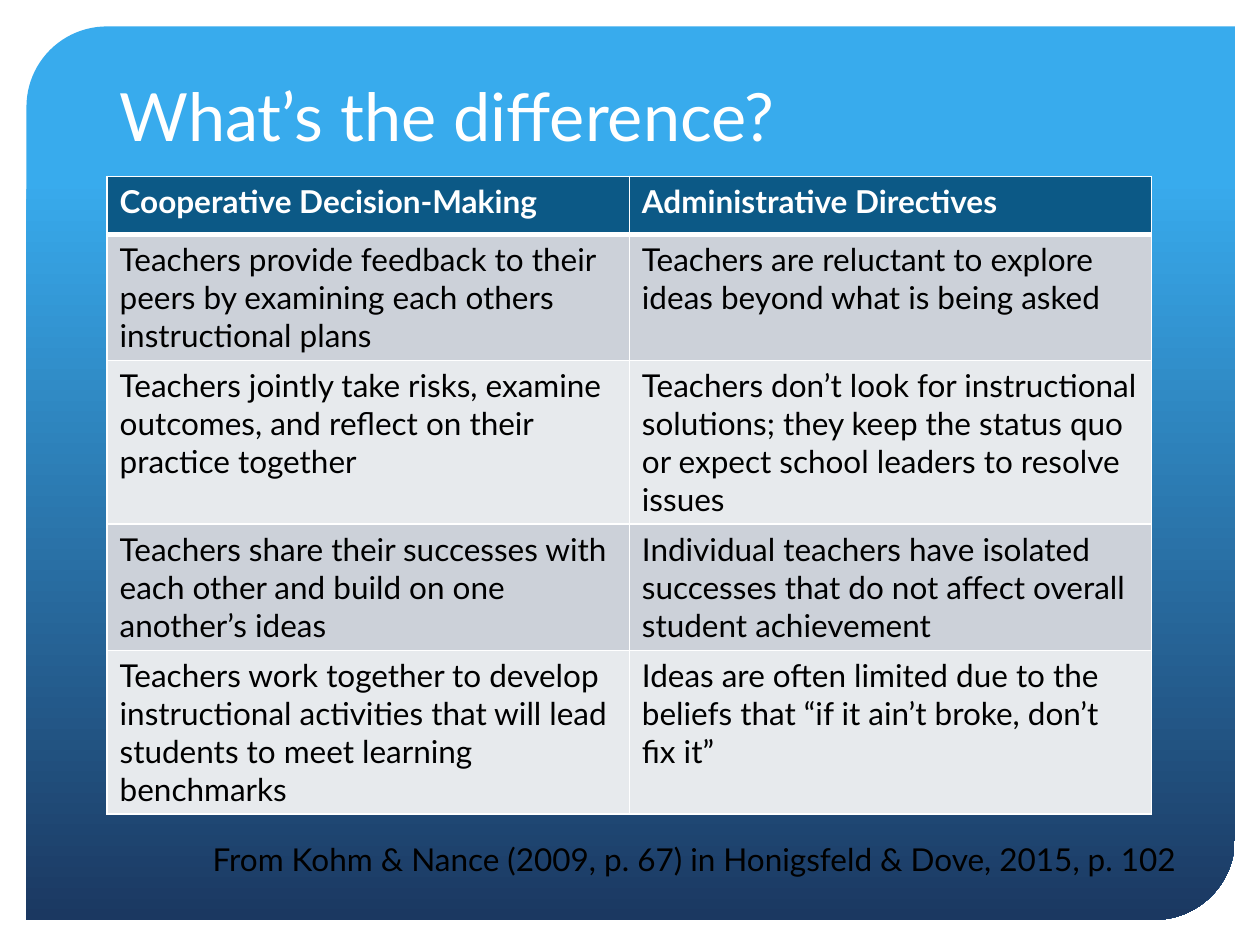
"""Build a slide that contrasts cooperative decisions with directives in a table."""
from dataclasses import dataclass
from typing import NamedTuple

from lxml import etree
from pptx import Presentation
from pptx import util as u
from pptx.dml import color
from pptx.enum import shapes, text
from pptx.oxml import ns

COLUMNS, ROWS = 100, 75
SLIDE_WIDTH, SLIDE_HEIGHT = u.Inches(10), u.Inches(7.5)


@dataclass(frozen=True)
class Theme:
    font: str = "Lato"
    title_size: int = 38
    body_size: int = 18
    light: str = "FFFFFF"
    dark: str = "000000"
    header: str = "0C5986"
    bands: tuple = ("CCD1D9", "E7EAED")
    gradient: tuple = ((0.17, "38ABED"), (1, "1B3861"))
    thin: float = 1
    thick: float = 3


class Area(NamedTuple):
    column: float
    row: float
    columns: float
    rows: float

    def lengths(self) -> tuple:
        return across(self.column), down(self.row), across(self.columns), down(self.rows)


class Label(NamedTuple):
    area: Area
    words: str
    size: int
    ink: str
    frame_format: dict


class Comparison(NamedTuple):
    cooperative: str
    directive: str
    rows: float


THEME = Theme()
PANEL = Area(2.1, 2.1, 95.9, 70.9)
TABLE = Area(8.5, 14, 82.9, 50.6)
LABELS = (
    Label(Area(8.5, 1.4, 82.9, 11.4), "What’s the difference?", THEME.title_size, THEME.light,
          {"word_wrap": True, "vertical_anchor": text.MSO_ANCHOR.BOTTOM}),
    Label(Area(15.9, 66.2, 80.4, 4),
          "From Kohm & Nance (2009, p. 67) in Honigsfeld & Dove, 2015, p. 102",
          THEME.body_size, THEME.dark,
          {"word_wrap": False, "auto_size": text.MSO_AUTO_SIZE.SHAPE_TO_FIT_TEXT}),
)
COMPARISONS = (
    Comparison("Cooperative Decision-Making", "Administrative Directives", 4.6),
    Comparison("Teachers provide feedback to their peers by examining each others instructional plans",
               "Teachers are reluctant to explore ideas beyond what is being asked", 10),
    Comparison("Teachers jointly take risks, examine outcomes, and reflect on their practice together",
               "Teachers don’t look for instructional solutions; they keep the status quo "
               "or expect school leaders to resolve issues", 13),
    Comparison("Teachers share their successes with each other and build on one another’s ideas",
               "Individual teachers have isolated successes that do not affect overall "
               "student achievement", 10),
    Comparison("Teachers work together to develop instructional activities that will lead "
               "students to meet learning benchmarks",
               "Ideas are often limited due to the beliefs that “if it ain’t broke, don’t fix it”", 13),
)


def across(columns: float) -> int:
    return round(SLIDE_WIDTH * columns / COLUMNS)


def down(rows: float) -> int:
    return round(SLIDE_HEIGHT * rows / ROWS)


def apply(target, values: dict) -> None:
    for name, value in values.items():
        setattr(target, name, value)


def write(frame, words: str, size: int, ink: str, bold: bool = False) -> None:
    span = frame.paragraphs[0].add_run()
    span.text = words
    apply(span.font, {"name": THEME.font, "size": u.Pt(size), "bold": bold})
    span.font.color.rgb = color.RGBColor.from_string(ink)


def draw_panel(page, area: Area) -> None:
    panel = page.shapes.add_shape(shapes.MSO_SHAPE.ROUND_2_DIAG_RECTANGLE, *area.lengths())
    panel.shadow.inherit = False
    panel.adjustments[0], panel.adjustments[1] = 0.09, 0
    panel.line.fill.background()
    panel.fill.gradient()
    panel.fill.gradient_angle = 270
    for stop, (position, tint) in zip(panel.fill.gradient_stops, THEME.gradient):
        stop.position = position
        stop.color.rgb = color.RGBColor.from_string(tint)


def draw_label(page, label: Label) -> None:
    box = page.shapes.add_textbox(*label.area.lengths())
    apply(box.text_frame, label.frame_format)
    write(box.text_frame, label.words, label.size, label.ink)


def draw_borders(cell, widths: dict) -> None:
    properties = cell._tc.get_or_add_tcPr()
    for side, width in widths.items():
        line = etree.SubElement(properties, ns.qn(f"a:ln{side}"), w=str(u.Pt(width)))
        fill = etree.SubElement(line, ns.qn("a:solidFill"))
        etree.SubElement(fill, ns.qn("a:srgbClr"), val=THEME.light)


def draw_cell(cell, words: str, index: int) -> None:
    is_header = index == 0
    draw_borders(cell, {"L": THEME.thin, "R": THEME.thin,
                        "T": THEME.thick if index == 1 else THEME.thin,
                        "B": THEME.thick if is_header else THEME.thin})
    cell.fill.solid()
    tint = THEME.header if is_header else THEME.bands[(index - 1) % 2]
    cell.fill.fore_color.rgb = color.RGBColor.from_string(tint)
    write(cell.text_frame, words, THEME.body_size,
          THEME.light if is_header else THEME.dark, is_header)


def draw_table(page, area: Area, comparisons: tuple) -> None:
    table = page.shapes.add_table(len(comparisons), 2, *area.lengths()).table
    for index, comparison in enumerate(comparisons):
        table.rows[index].height = down(comparison.rows)
        for cell, words in zip(table.rows[index].cells, comparison[:2]):
            draw_cell(cell, words, index)


def main() -> None:
    deck = Presentation()
    apply(deck, {"slide_width": SLIDE_WIDTH, "slide_height": SLIDE_HEIGHT})
    page = deck.slides.add_slide(deck.slide_layouts[6])
    draw_panel(page, PANEL)
    draw_table(page, TABLE, COMPARISONS)
    for label in LABELS:
        draw_label(page, label)
    deck.save("out.pptx")


if __name__ == "__main__":
    main()
